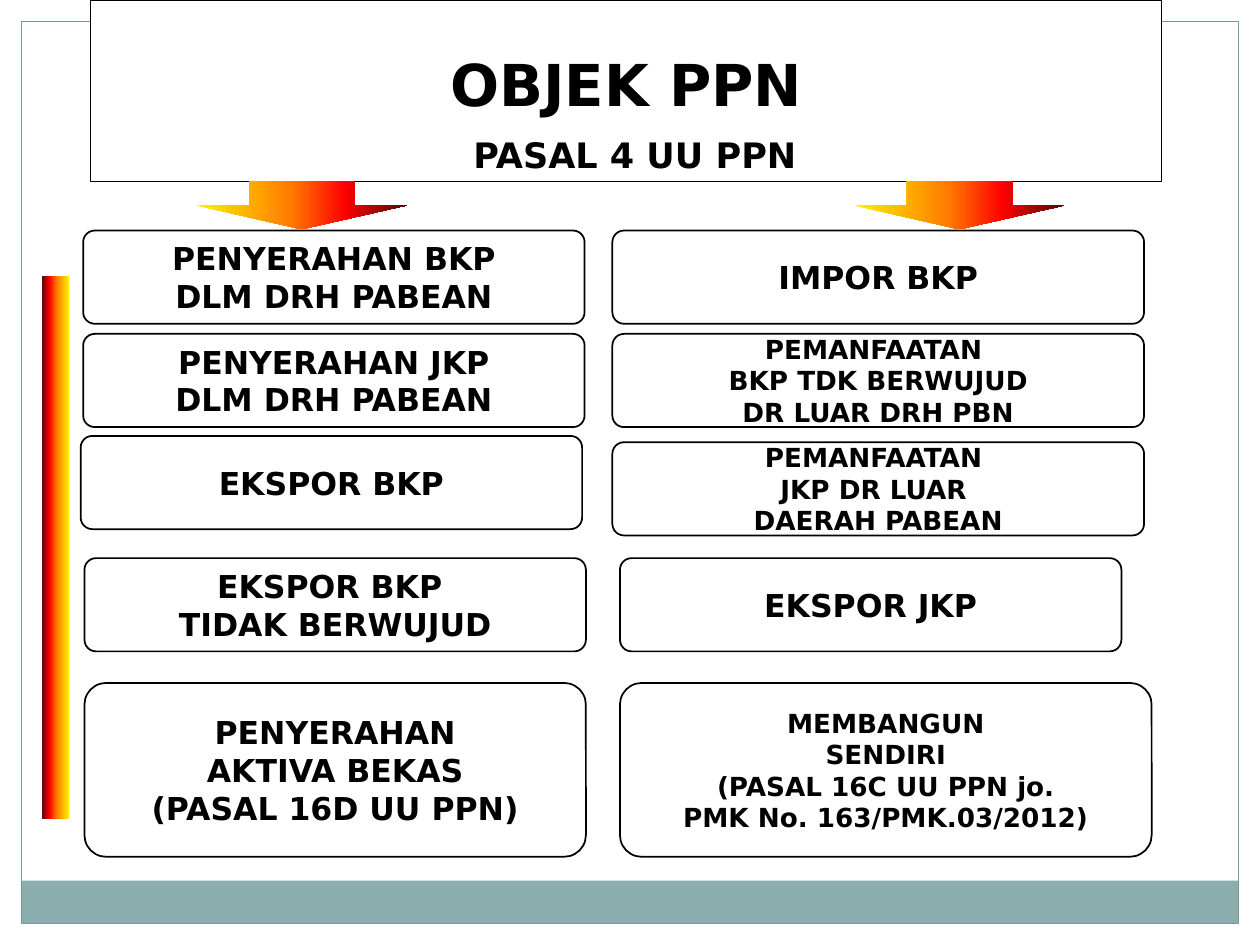
from dataclasses import dataclass

from lxml.etree import SubElement
from pptx import Presentation
from pptx.dml.color import RGBColor
from pptx.enum.shapes import MSO_SHAPE
from pptx.enum.text import MSO_ANCHOR, PP_ALIGN
from pptx.oxml.ns import qn
from pptx.util import Inches, Pt


@dataclass(frozen=True)
class Theme:
    font: str = "DejaVu Sans"
    ink: str = "000000"
    paper: str = "FFFFFF"
    band: str = "8CADAE"
    frame: str = "7C999A"
    fire: tuple = ((0, "FFF200"), (45, "FF7A00"), (70, "FF0300"), (100, "4D0808"))
    title: int = 33
    sub: int = 20
    large: int = 18
    small: int = 15


THEME = Theme()


def color(code):
    return RGBColor.from_string(code)


def draw(slide, kind, box, fill=None, line=None, width=0.75):
    """Add a preset shape in box (left, top, width, height in inches)."""
    shape = slide.shapes.add_shape(kind, *map(Inches, box))
    shape.shadow.inherit = False
    if fill:
        shape.fill.solid()
        shape.fill.fore_color.rgb = color(fill)
    else:
        shape.fill.background()
    if line:
        shape.line.color.rgb = color(line)
        shape.line.width = Pt(width)
    else:
        shape.line.fill.background()
    return shape


def blend(shape, stops):
    """Fill a shape with a left-to-right gradient of (percent, colour) stops."""
    shape.fill.gradient()
    shape.fill.gradient_angle = 0
    group = shape._element.spPr.find(qn("a:gradFill")).find(qn("a:gsLst"))
    for old in list(group):
        group.remove(old)
    for pos, code in stops:
        stop = SubElement(group, qn("a:gs"), pos=str(pos * 1000))
        SubElement(stop, qn("a:srgbClr"), val=code)


def write(shape, text, size, anchor=MSO_ANCHOR.MIDDLE, wrap=False):
    """Write one bold centred paragraph for each line of text."""
    frame = shape.text_frame
    frame.word_wrap = wrap
    frame.vertical_anchor = anchor
    for i, words in enumerate(text.split("\n")):
        para = frame.paragraphs[0] if i == 0 else frame.add_paragraph()
        para.alignment = PP_ALIGN.CENTER
        run = para.add_run()
        run.text = words
        run.font.name = THEME.font
        run.font.size = Pt(size)
        run.font.bold = True
        run.font.color.rgb = color(THEME.ink)
    return frame


def add_frame(slide, box):
    left, top, width, height = box
    foot = 0.34
    draw(slide, MSO_SHAPE.RECTANGLE, (left, top + height - foot, width, foot),
         fill=THEME.band)
    draw(slide, MSO_SHAPE.RECTANGLE, box, line=THEME.frame)


def add_head(slide, box):
    """Place the title panel and the two arrows that hang from it."""
    left, top, width, height = box
    panel = draw(slide, MSO_SHAPE.RECTANGLE, box, THEME.paper, THEME.ink)
    frame = write(panel, "OBJEK PPN\nPASAL 4 UU PPN", THEME.title,
                  anchor=MSO_ANCHOR.BOTTOM, wrap=True)
    sub = frame.paragraphs[1]
    sub.runs[0].font.size = Pt(THEME.sub)
    sub.space_before = Pt(8.5)
    sub._p.get_or_add_pPr().set("marL", str(Inches(0.14)))
    for shift in (0.84, 6.06):
        arrow = draw(slide, MSO_SHAPE.DOWN_ARROW,
                     (left + shift, top + height, 1.67, 0.38))
        blend(arrow, THEME.fire)


def add_bar(slide, box):
    bar = draw(slide, MSO_SHAPE.RECTANGLE, box)
    blend(bar, [(100 - pos, code) for pos, code in reversed(THEME.fire)])


def add_cards(slide, box, cards):
    """Place cards (shift, drop, trim, size, text) in a column; the last is tall."""
    left, top, width, height = box
    low, tall = 0.74, 1.38
    for shift, drop, trim, size, text in cards:
        deep = tall if drop + tall >= height else low
        card = draw(slide, MSO_SHAPE.ROUNDED_RECTANGLE,
                    (left + shift, top + drop, width - trim, deep),
                    line=THEME.ink, width=1)
        card.adjustments[0] = 0.125
        write(card, text, size)


def main():
    deck = Presentation()
    deck.slide_width, deck.slide_height = Inches(10), Inches(7.5)
    slide = deck.slides.add_slide(deck.slide_layouts[6])
    big, small = THEME.large, THEME.small

    add_frame(slide, (0.17, 0.17, 9.66, 7.16))
    add_head(slide, (0.72, 0, 8.5, 1.44))
    add_bar(slide, (0.33, 2.19, 0.22, 4.31))
    add_cards(slide, (0.66, 1.83, 3.98, 4.96), [
        (0, 0, 0, big, "PENYERAHAN BKP\nDLM DRH PABEAN"),
        (0, 0.82, 0, big, "PENYERAHAN JKP\nDLM DRH PABEAN"),
        (-0.02, 1.63, 0, big, "EKSPOR BKP"),
        (0.01, 2.6, 0, big, "EKSPOR BKP \nTIDAK BERWUJUD"),
        (0.01, 3.59, 0, big, "PENYERAHAN\nAKTIVA BEKAS\n(PASAL 16D UU PPN)"),
    ])
    add_cards(slide, (4.86, 1.83, 4.22, 4.96), [
        (0, 0, 0, big, "IMPOR BKP"),
        (0, 0.82, 0, small, "PEMANFAATAN \nBKP TDK BERWUJUD\nDR LUAR DRH PBN"),
        (0, 1.68, 0, small, "PEMANFAATAN \nJKP DR LUAR \nDAERAH PABEAN"),
        (0.06, 2.6, 0.24, big, "EKSPOR JKP"),
        (0.06, 3.59, 0, small, "MEMBANGUN\nSENDIRI\n(PASAL 16C UU PPN jo.\n"
                               "PMK No. 163/PMK.03/2012)"),
    ])
    deck.save("out.pptx")


if __name__ == "__main__":
    main()
